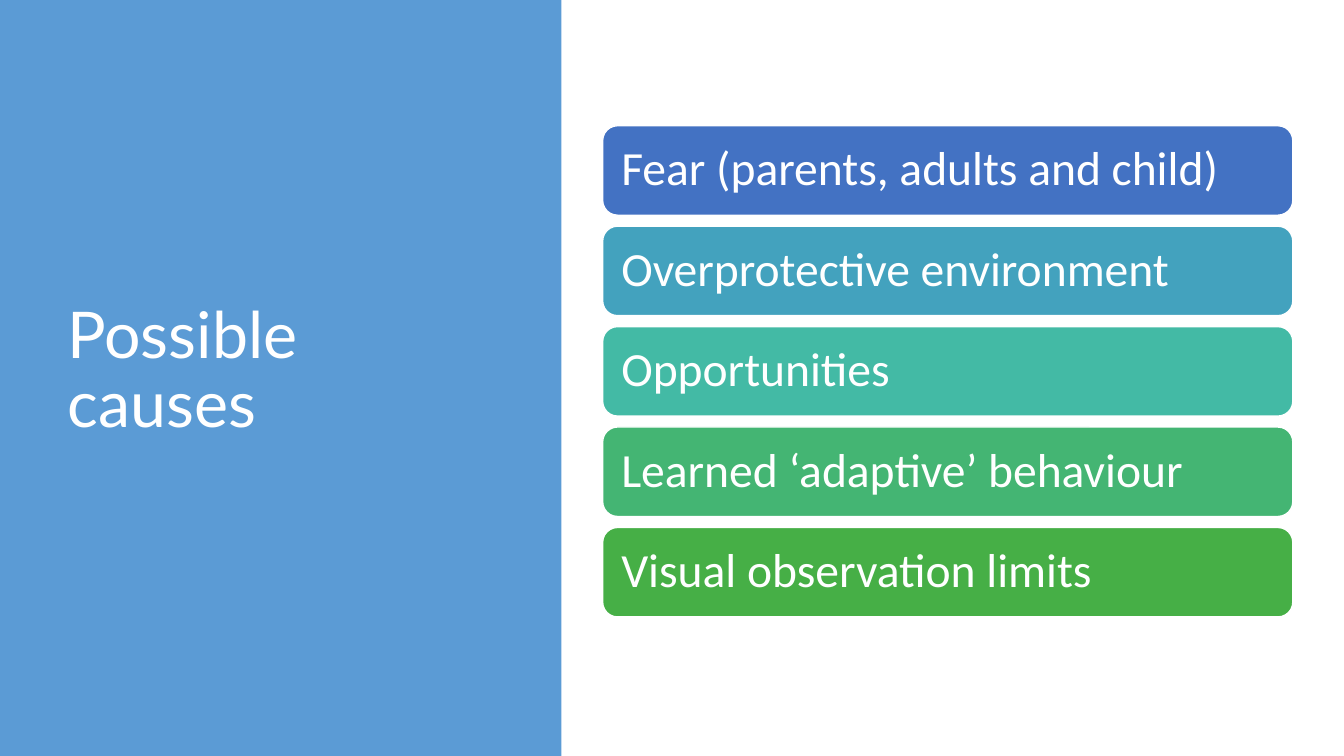
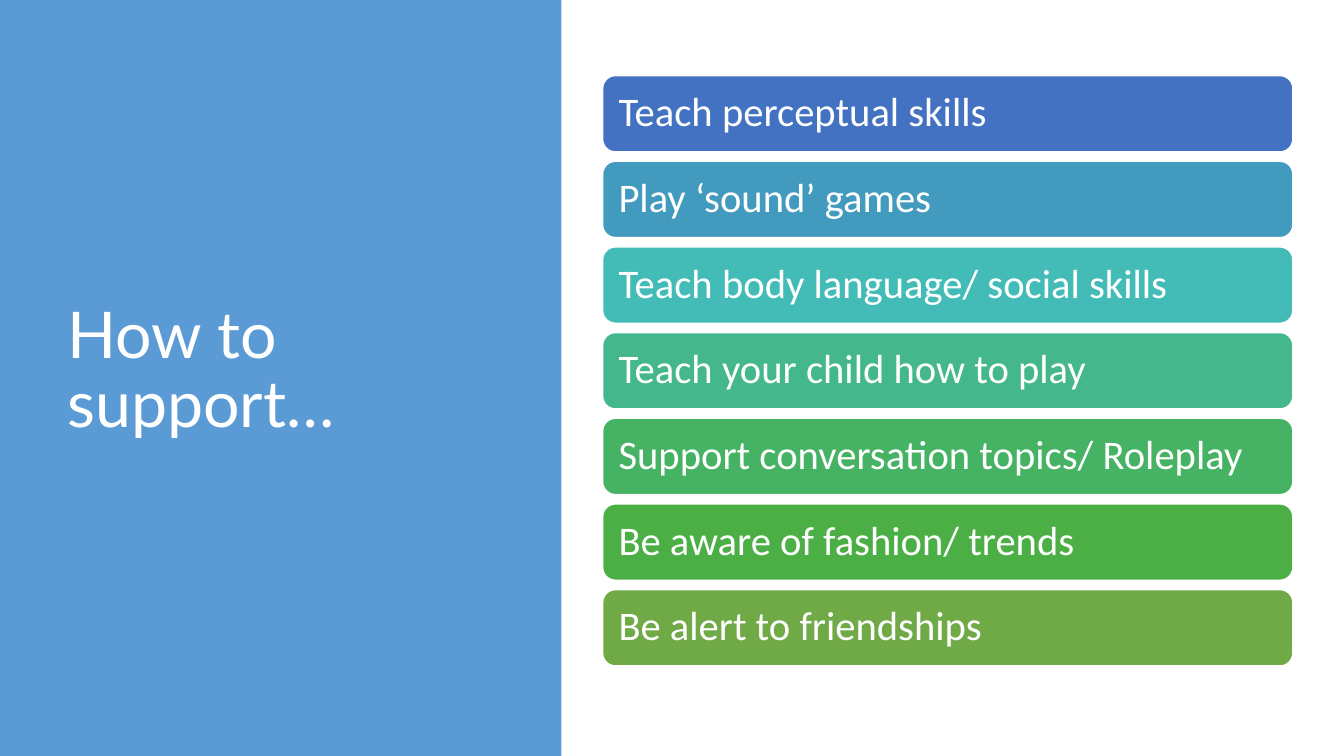
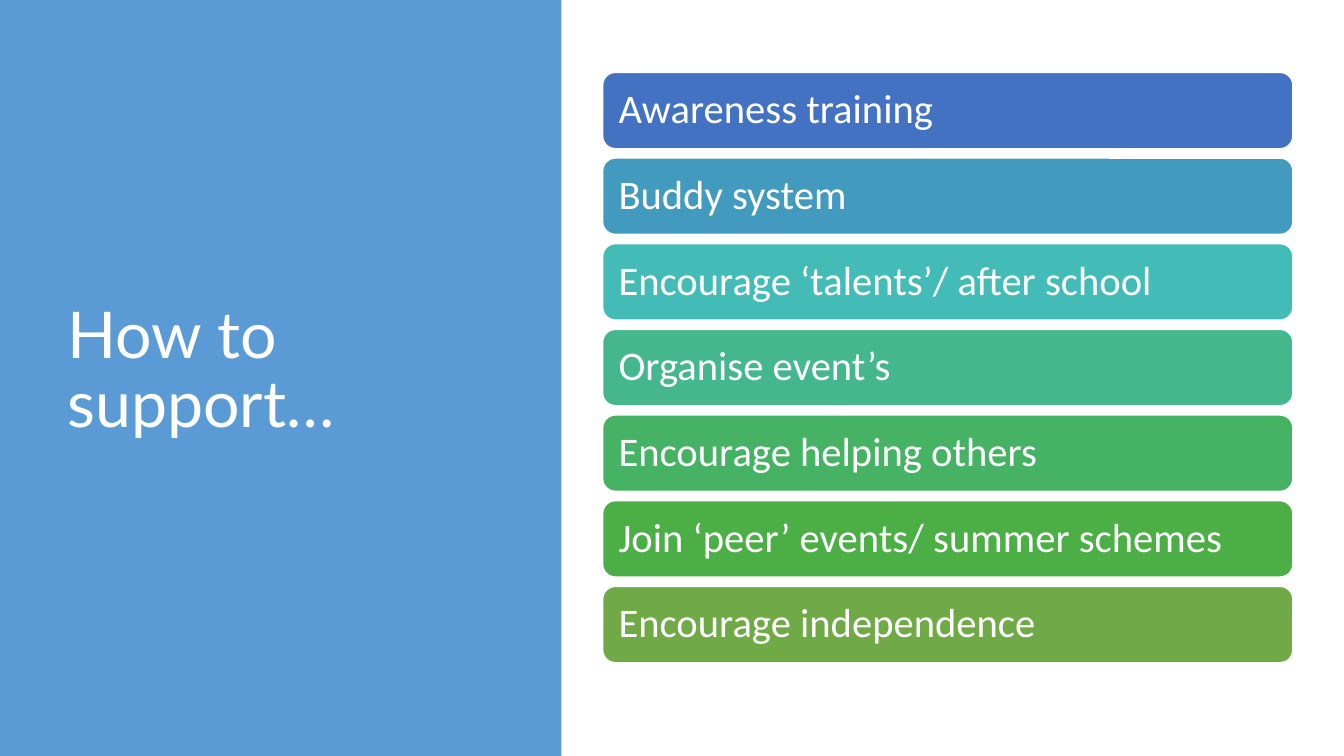
from pptx import Presentation
from pptx.dml.color import RGBColor
from pptx.enum.shapes import MSO_SHAPE
from pptx.enum.text import MSO_ANCHOR, PP_ALIGN
from pptx.util import Pt

# Shared colours
WHITE = RGBColor(0xFF, 0xFF, 0xFF)
PANEL_BLUE = RGBColor(0x5B, 0x9B, 0xD5)
BLUE = RGBColor(0x43, 0x72, 0xC3)
FIVE_BAR_COLOURS = [
    BLUE,
    RGBColor(0x43, 0xA2, 0xBE),
    RGBColor(0x43, 0xBA, 0xA5),
    RGBColor(0x44, 0xB5, 0x73),
    RGBColor(0x46, 0xAF, 0x46),
]
SEVEN_BAR_COLOURS = [
    BLUE,
    RGBColor(0x43, 0x9A, 0xBF),
    RGBColor(0x43, 0xBC, 0xB8),
    RGBColor(0x44, 0xB7, 0x8C),
    RGBColor(0x45, 0xB3, 0x63),
    RGBColor(0x4C, 0xAF, 0x46),
    RGBColor(0x6F, 0xAA, 0x47),
]

# Shared layout, in points
SLIDE_WIDTH, SLIDE_HEIGHT = 960, 540
PANEL_WIDTH = 401
BAR_LEFT, BAR_WIDTH = 430.5, 493
TITLE_FONT = {"name": "Lato", "size": Pt(46)}

# Bar height, step and margin as multiples of the text size
HEIGHT_RATIO, STEP_RATIO, MARGIN_RATIO = 1.88, 2.11, 0.3

SLIDES = [
    {
        "title": "Possible \vcauses",
        "top": 89.8,
        "text_size": 34,
        "colours": FIVE_BAR_COLOURS,
        "bars": [
            "Fear (parents, adults and child)",
            "Overprotective environment",
            "Opportunities",
            "Learned ‘adaptive’ behaviour",
            "Visual observation limits",
        ],
    },
    {
        "title": "How to support…",
        "top": 54,
        "text_size": 29,
        "colours": SEVEN_BAR_COLOURS,
        "bars": [
            "Teach perceptual skills",
            "Play ‘sound’ games",
            "Teach body language/ social skills",
            "Teach your child how to play",
            "Support conversation topics/ Roleplay",
            "Be aware of fashion/ trends",
            "Be alert to friendships",
        ],
    },
    {
        "title": "How to support…",
        "top": 51.7,
        "text_size": 29,
        "colours": SEVEN_BAR_COLOURS,
        "bars": [
            "Awareness training",
            "Buddy system",
            "Encourage ‘talents’/ after school",
            "Organise event’s",
            "Encourage helping others",
            "Join ‘peer’ events/ summer schemes",
            "Encourage independence",
        ],
    },
]


def add_filled_shape(slide, kind, left, top, width, height, colour):
    shape = slide.shapes.add_shape(kind, Pt(left), Pt(top), Pt(width), Pt(height))
    shape.shadow.inherit = False
    shape.fill.solid()
    shape.fill.fore_color.rgb = colour
    return shape


def write_text(shape, text, font_values, side_margin, end_margin):
    frame_values = {
        "word_wrap": True,
        "vertical_anchor": MSO_ANCHOR.MIDDLE,
        "margin_left": Pt(side_margin),
        "margin_right": Pt(side_margin),
        "margin_top": Pt(end_margin),
        "margin_bottom": Pt(end_margin),
    }
    for name, value in frame_values.items():
        setattr(shape.text_frame, name, value)
    paragraph = shape.text_frame.paragraphs[0]
    paragraph.text = text
    paragraph.alignment = PP_ALIGN.LEFT
    paragraph.line_spacing = 0.9
    for run in paragraph.runs:
        for name, value in font_values.items():
            setattr(run.font, name, value)
        run.font.color.rgb = WHITE


presentation = Presentation()
presentation.slide_width = Pt(SLIDE_WIDTH)
presentation.slide_height = Pt(SLIDE_HEIGHT)
blank_layout = presentation.slide_layouts[6]

for content in SLIDES:
    slide = presentation.slides.add_slide(blank_layout)

    # Left panel and title
    panel = add_filled_shape(
        slide, MSO_SHAPE.RECTANGLE, 0, 0, PANEL_WIDTH, SLIDE_HEIGHT, PANEL_BLUE
    )
    panel.line.fill.background()
    title = slide.shapes.add_textbox(Pt(41.2), Pt(49), Pt(332.6), Pt(433.4))
    write_text(title, content["title"], TITLE_FONT, 7.2, 3.6)

    # Stack of coloured bars
    size = content["text_size"]
    bar_font = {"name": "Calibri", "size": Pt(size)}
    for index, (text, colour) in enumerate(zip(content["bars"], content["colours"])):
        bar_top = content["top"] + index * STEP_RATIO * size
        bar = add_filled_shape(
            slide, MSO_SHAPE.ROUNDED_RECTANGLE,
            BAR_LEFT, bar_top, BAR_WIDTH, HEIGHT_RATIO * size, colour,
        )
        bar.line.color.rgb = WHITE
        bar.line.width = Pt(1)
        write_text(bar, text, bar_font, MARGIN_RATIO * size, MARGIN_RATIO * size)

presentation.save("out.pptx")
